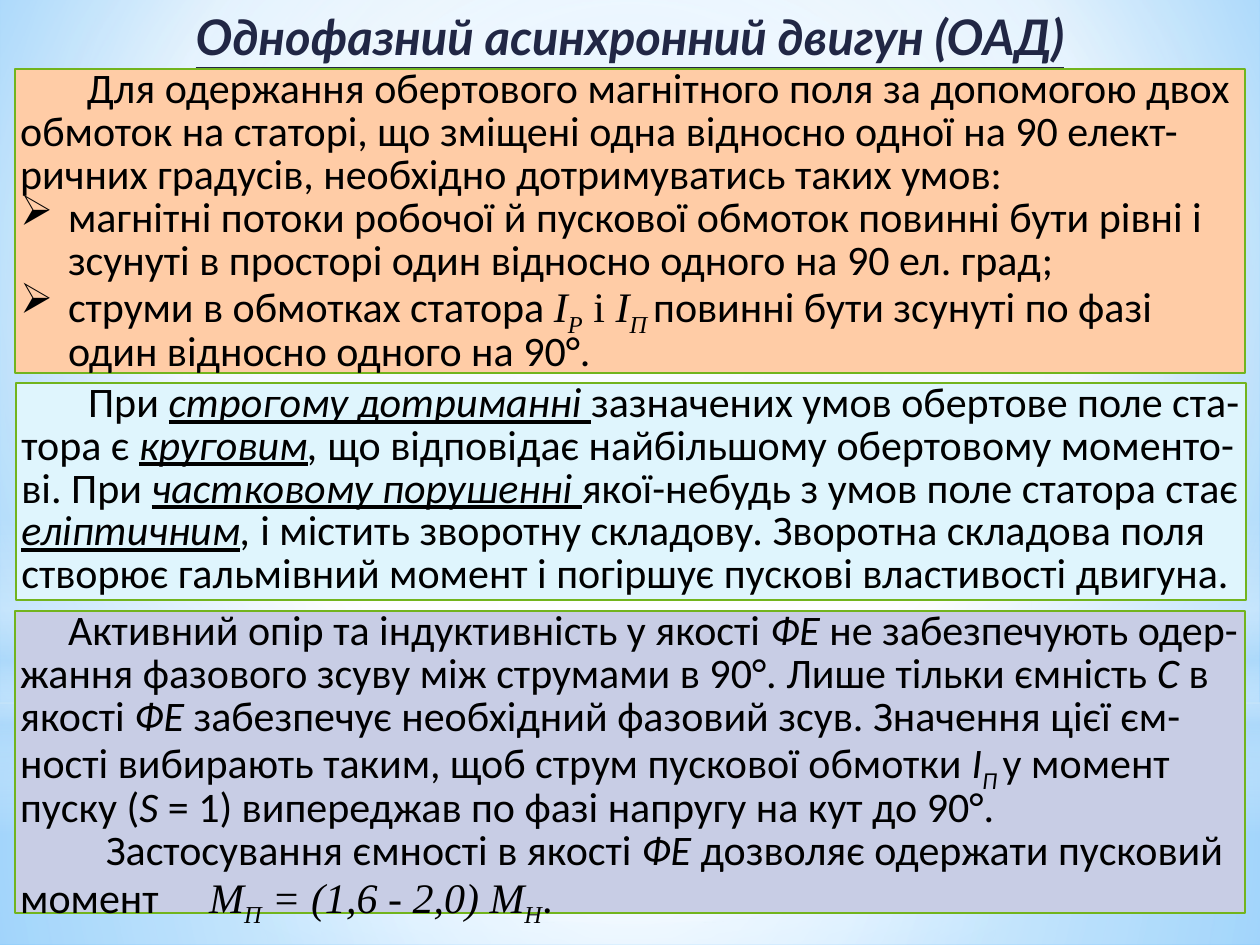
"""Build a slide on the conditions for a rotating field in a single-phase induction motor."""
from dataclasses import dataclass
from typing import NamedTuple

import lxml.etree
import pptx
import pptx.dml.color
import pptx.enum.shapes
import pptx.enum.text
import pptx.oxml
import pptx.oxml.ns
import pptx.util

COLUMNS, ROWS = 100, 75
WIDTH, HEIGHT = pptx.util.Inches(10), pptx.util.Inches(7.5)
SERIF = "Times New Roman"
SHAPES = pptx.enum.shapes.MSO_SHAPE
ALIGN = pptx.enum.text.PP_ALIGN
qn = pptx.oxml.ns.qn


class Area(NamedTuple):
    left: float
    top: float
    width: float
    height: float


class Stop(NamedTuple):
    position: int
    color: str
    opacity: int = 100


@dataclass
class Gradient:
    stops: list[Stop]
    focus: tuple[int, ...] = (50, 50, 50, 50)
    angle: int | None = None


@dataclass
class Glow:
    area: Area
    gradient: Gradient
    outline: int = SHAPES.RECTANGLE


@dataclass
class Span:
    text: str
    italic: bool = False
    underline: bool = False
    lowered: bool = False
    font: str = "Calibri"


@dataclass
class Passage:
    spans: list[Span]
    indent: float = 0
    bullet: str = ""
    tab: float = 0


@dataclass
class Panel:
    area: Area
    color: str
    passages: list[Passage]


def term(text: str) -> Span:
    """Return an italic underlined span."""
    return Span(text, italic=True, underline=True)


def symbol(text: str, lowered: bool = False, font: str = "Calibri") -> Span:
    """Return an italic span for a quantity or its index."""
    return Span(text, italic=True, lowered=lowered, font=font)


BACKDROP = Gradient([Stop(0, "9ED5FF"), Stop(60, "FFFFFF"), Stop(100, "5BB9FF")], (20, 10, 20, 60))
GLOWS = [
    Glow(Area(0, 55.8, 100, 19.2),
         Gradient([Stop(0, "FFFFFF", 91), Stop(37, "FFFFFF", 76), Stop(100, "B4DCFA", 79)])),
    Glow(Area(0, 0, 100, 55.8),
         Gradient([Stop(0, "FFFFFF", 89), Stop(48, "FFFFFF", 62), Stop(100, "B4DCFA", 79)])),
    Glow(Area(0, 41.2, 100, 25),
         Gradient([Stop(0, "FFFFFF", 0), Stop(29, "FFFFFF", 30), Stop(45, "B4DCFA", 40),
                   Stop(55, "FFFFFF", 26), Stop(65, "B4DCFA", 60), Stop(100, "FFFFFF", 0)], angle=90)),
    Glow(Area(0, 17.5, 100, 55.8),
         Gradient([Stop(0, "FFFFFF"), Stop(56, "FFFFFF", 0)]), SHAPES.OVAL),
]
PANELS = [
    Panel(Area(1.2, 5.5, 97.6, 24.1), "FFCCA6", [
        Passage([Span("Для одержання обертового магнітного поля за допомогою двох обмоток на статорі, що "
                      "зміщені одна відносно одної на 90 елект-ричних градусів, необхідно "
                      "дотримуватись таких умов:")], indent=0.53),
        Passage([Span("магнітні потоки робочої й пускової обмоток повинні бути рівні і зсунуті в "
                      "просторі один відносно одного на 90 ел. град;")], bullet="➢"),
        Passage([Span("струми в обмотках статора "), symbol("І", font=SERIF), symbol("Р", True, SERIF),
                 Span(" і ", font=SERIF), symbol("І", font=SERIF), symbol("П ", True, SERIF),
                 Span("повинні бути зсунуті по фазі один відносно одного на 90°.")], bullet="➢"),
    ]),
    Panel(Area(1.3, 30.4, 97.6, 17.2), "DFF5FD", [
        Passage([Span("При "), term("строгому дотриманні "),
                 Span("зазначених умов обертове поле ста-тора є "), term("круговим"), symbol(","),
                 Span(" що відповідає найбільшому обертовому моменто-ві. При "),
                 term("частковому порушенні "), Span("якої-небудь з умов поле статора стає "),
                 term("еліптичним"), symbol(","),
                 Span(" і містить зворотну складову. Зворотна складова поля створює гальмівний "
                      "момент і погіршує пускові властивості двигуна.")], indent=0.53),
    ]),
    Panel(Area(1.2, 48.5, 97.6, 24), "C8CDE5", [
        Passage([Span("Активний опір та індуктивність у якості "), symbol("ФЕ"),
                 Span(" не забезпечують одер-жання фазового зсуву між струмами в 90°. "
                      "Лише тільки ємність "), symbol("С"), Span(" в якості "), symbol("ФЕ"),
                 Span(" забезпечує необхідний фазовий зсув. Значення цієї єм-ності вибирають таким, "
                      "щоб струм пускової обмотки "), symbol("І"), symbol("П ", True),
                 Span("у момент пуску ("), symbol("S"),
                 Span(" = 1) випереджав по фазі напругу на кут до 90°.")], indent=0.38),
        Passage([Span("Застосування ємності в якості "), symbol("ФЕ"),
                 Span(" дозволяє одержати пусковий момент\t"), symbol("М", font=SERIF),
                 symbol("П", True, SERIF), symbol(" = (1,6 - 2,0) М", font=SERIF),
                 symbol("Н", True, SERIF), Span(".")], indent=0.68, tab=1.32),
    ]),
]


def rgb(color: str) -> pptx.dml.color.RGBColor:
    """Turn a hex string into a colour."""
    return pptx.dml.color.RGBColor.from_string(color)


def place(area: Area) -> list[int]:
    """Turn grid columns and rows into slide lengths."""
    across, down = WIDTH / COLUMNS, HEIGHT / ROWS
    return [round(area.left * across), round(area.top * down),
            round(area.width * across), round(area.height * down)]


def apply_gradient(solid: lxml.etree._Element, gradient: Gradient) -> None:
    """Put a gradient in the place of a solid fill."""
    fill = pptx.oxml.parse_xml(f'<a:gradFill {pptx.oxml.ns.nsdecls("a")} rotWithShape="1"><a:gsLst/></a:gradFill>')
    for stop in gradient.stops:
        mark = lxml.etree.SubElement(fill[0], qn("a:gs"), pos=str(stop.position * 1000))
        tint = lxml.etree.SubElement(mark, qn("a:srgbClr"), val=stop.color)
        if stop.opacity < 100:
            lxml.etree.SubElement(tint, qn("a:alpha"), val=str(stop.opacity * 1000))
    if gradient.angle is None:
        path = lxml.etree.SubElement(fill, qn("a:path"), path="circle")
        sides = {side: str(share * 1000) for side, share in zip("ltrb", gradient.focus)}
        lxml.etree.SubElement(path, qn("a:fillToRect"), sides)
    else:
        lxml.etree.SubElement(fill, qn("a:lin"), ang=str(gradient.angle * 60000), scaled="0")
    solid.getparent().replace(solid, fill)


def add_block(slide, area: Area, color: str, outline: int = SHAPES.RECTANGLE):
    """Add a filled shape without line or shadow."""
    block = slide.shapes.add_shape(outline, *place(area))
    block.shadow.inherit = False
    block.fill.solid()
    block.fill.fore_color.rgb = rgb(color)
    block.line.fill.background()
    return block


def add_glow(slide, glow: Glow) -> None:
    """Add one layer of background light."""
    block = add_block(slide, glow.area, "FFFFFF", glow.outline)
    apply_gradient(block.element.spPr.find(qn("a:solidFill")), glow.gradient)


def set_frame(frame, side: float, edge: float) -> None:
    """Set wrapping, growth, anchor and margins of a text frame."""
    frame.word_wrap = True
    frame.auto_size = pptx.enum.text.MSO_AUTO_SIZE.SHAPE_TO_FIT_TEXT
    frame.vertical_anchor = pptx.enum.text.MSO_ANCHOR.TOP
    frame.margin_left = frame.margin_right = pptx.util.Inches(side)
    frame.margin_top = frame.margin_bottom = pptx.util.Inches(edge)


def add_text(paragraph, text: str, *, size: float = 24, font: str = "Calibri", color: str = "000000",
             bold: bool = False, italic: bool = False, underline: bool = False, lowered: bool = False) -> None:
    """Add a formatted run to a paragraph."""
    run = paragraph.add_run()
    run.text = text
    run.font.size, run.font.name = pptx.util.Pt(size), font
    run.font.bold, run.font.italic, run.font.underline = bold, italic, underline
    run.font.color.rgb = rgb(color)
    if lowered:
        run.font.element.set("baseline", "-25000") if hasattr(run.font, "element") else \
            run._r.get_or_add_rPr().set("baseline", "-25000")


def fill_paragraph(paragraph, passage: Passage) -> None:
    """Write a passage with its indent, bullet and tab stop."""
    paragraph.alignment = ALIGN.LEFT
    paragraph.line_spacing = 0.85
    hang = pptx.util.Inches(0.38) if passage.bullet else 0
    settings = paragraph._p.get_or_add_pPr()
    settings.set("marL", str(hang))
    settings.set("indent", str(-hang or pptx.util.Inches(passage.indent)))
    if passage.bullet:
        lxml.etree.SubElement(settings, qn("a:buChar"), char=passage.bullet)
    if passage.tab:
        stops = lxml.etree.SubElement(settings, qn("a:tabLst"))
        lxml.etree.SubElement(stops, qn("a:tab"), pos=str(pptx.util.Inches(passage.tab)), algn="l")
    for span in passage.spans:
        add_text(paragraph, span.text, font=span.font, italic=span.italic,
                 underline=span.underline, lowered=span.lowered)


def add_panel(slide, panel: Panel) -> None:
    """Add a bordered panel with its passages."""
    block = add_block(slide, panel.area, panel.color)
    block.line.color.rgb = rgb("72B41D")
    block.line.width = pptx.util.Pt(1.25)
    frame = block.text_frame
    set_frame(frame, 0.04, 0)
    for number, passage in enumerate(panel.passages):
        fill_paragraph(frame.add_paragraph() if number else frame.paragraphs[0], passage)


def add_title(slide, text: str) -> None:
    """Add the centred slide title."""
    frame = slide.shapes.add_textbox(*place(Area(1.2, 0, 97.6, 5.7))).text_frame
    set_frame(frame, 0, 0.05)
    frame.paragraphs[0].alignment = ALIGN.CENTER
    add_text(frame.paragraphs[0], text, size=28, font="Lato", color="212745",
             bold=True, italic=True, underline=True)


def main() -> None:
    """Build and save the slide."""
    deck = pptx.Presentation()
    deck.slide_width, deck.slide_height = WIDTH, HEIGHT
    slide = deck.slides.add_slide(deck.slide_layouts[6])
    slide.background.fill.solid()
    slide.background.fill.fore_color.rgb = rgb("FFFFFF")
    apply_gradient(slide.element.xpath(".//p:bgPr/a:solidFill")[0], BACKDROP)
    for glow in GLOWS:
        add_glow(slide, glow)
    add_title(slide, "Однофазний асинхронний двигун (ОАД)")
    for panel in PANELS:
        add_panel(slide, panel)
    deck.save("out.pptx")


if __name__ == "__main__":
    main()
